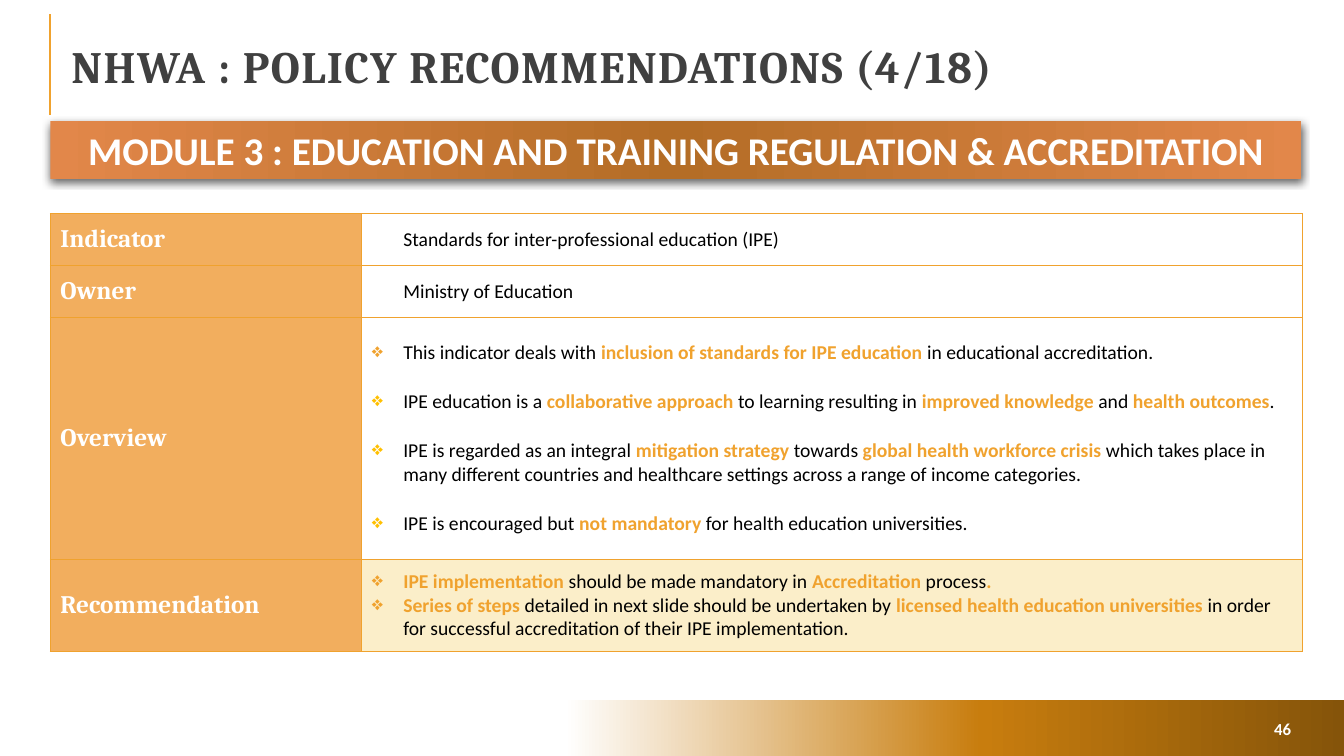
from lxml import etree
from pptx import Presentation
from pptx import util as u
from pptx.dml.color import RGBColor
from pptx.enum import shapes, text
from pptx.oxml import ns

BULLET = 0.79


def color(code):
    return RGBColor.from_string(code)


def node(parent, tag, **attrs):
    return etree.SubElement(parent, ns.qn("a:" + tag), attrs)


class Deck:
    """Holds the style and the current slide, and draws each kind of element."""

    accent, gold, dark = "F0A22E", "FFC000", "404040"
    label, pale, white, black = "F2AE5E", "FBEEC9", "FFFFFF", "000000"
    head, body = "Cambria", "Calibri"

    def __init__(self):
        self.prs = Presentation()
        self.prs.slide_width, self.prs.slide_height = u.Cm(33.87), u.Cm(19.05)
        self.slide = self.prs.slides.add_slide(self.prs.slide_layouts[6])

    def font(self, para, name, size, code, bold=True):
        font = para.font
        font.name, font.size, font.bold = name, u.Pt(size), bold
        font.color.rgb = color(code)

    def rule(self, x, top, end):
        line = self.slide.shapes.add_connector(
            shapes.MSO_CONNECTOR.STRAIGHT, u.Cm(x), u.Cm(end), u.Cm(x), u.Cm(top))
        line.line.color.rgb = color(self.accent)
        line.line.width = u.Pt(1.5)
        node(line._element.spPr, "effectLst")

    def bar(self, box, stops):
        shape = self.slide.shapes.add_shape(
            shapes.MSO_SHAPE.RECTANGLE, *map(u.Cm, box))
        shape.shadow.inherit = False
        shape.fill.gradient()
        shape.fill.gradient_angle = 0
        shape.line.fill.background()
        group = shape._element.spPr.find(".//" + ns.qn("a:gsLst"))
        group.clear()
        for place, code in stops:
            node(node(group, "gs", pos=str(place * 1000)), "srgbClr", val=code)
        return shape

    def banner(self, box, words, stops):
        shape = self.bar(box, stops)
        effect = shape._element.spPr.find(ns.qn("a:effectLst"))
        shade = node(effect, "outerShdw", blurRad=str(u.Pt(6)),
                     dist=str(u.Pt(2)), dir="5400000", rotWithShape="0")
        node(node(shade, "srgbClr", val=self.black), "alpha", val="60000")
        para = shape.text_frame.paragraphs[0]
        para.text = words
        para.alignment = text.PP_ALIGN.CENTER
        self.font(para, self.body, 28, self.white)

    def label_box(self, box, words, name, size, code):
        frame = self.slide.shapes.add_textbox(*map(u.Cm, box)).text_frame
        frame.word_wrap = True
        frame.vertical_anchor = text.MSO_ANCHOR.MIDDLE
        para = frame.paragraphs[0]
        para.text = words
        self.font(para, name, size, code)
        return para

    def title(self, box, words):
        para = self.label_box(box, words, self.head, 32, self.dark)
        para.line_spacing = 0.8
        para._p.pPr.find(ns.qn("a:defRPr")).set("spc", "100")

    def number(self, box, words):
        para = self.label_box(box, words, self.body, 12, self.white)
        para.alignment = text.PP_ALIGN.RIGHT

    def rich(self, para, words, mark, gap):
        props = para._p.get_or_add_pPr()
        props.set("marL", str(u.Cm(BULLET)))
        if mark:
            props.set("indent", str(-u.Cm(BULLET)))
            node(node(props, "buClr"), "srgbClr", val=mark)
            node(props, "buChar", char="❖")
        if gap:
            para.space_before = u.Pt(gap)
        self.font(para, self.body, 14, self.black, False)
        for turn, part in enumerate(words.split("*")):
            if part:
                run = para.add_run()
                run.text = part
                if turn % 2:
                    run.font.bold = True
                    run.font.color.rgb = color(self.accent)

    def cell(self, cell, code):
        cell.vertical_anchor = text.MSO_ANCHOR.MIDDLE
        props = cell._tc.get_or_add_tcPr()
        for side in ("lnL", "lnR", "lnT", "lnB"):
            edge = node(props, side, w=str(u.Pt(0.75)))
            node(node(edge, "solidFill"), "srgbClr", val=self.accent)
        cell.fill.solid()
        cell.fill.fore_color.rgb = color(code)

    def table(self, box, cols, rows):
        grid = self.slide.shapes.add_table(
            len(rows), len(cols), *map(u.Cm, box)).table
        for col, width in zip(grid.columns, cols):
            col.width = u.Cm(width)
        for i, (name, height, back, gap, lines) in enumerate(rows):
            grid.rows[i].height = u.Cm(height)
            left, right = grid.cell(i, 0), grid.cell(i, 1)
            self.cell(left, self.label)
            self.cell(right, back)
            para = left.text_frame.paragraphs[0]
            para.text = name
            self.font(para, self.head, 18, self.white)
            frame = right.text_frame
            for j, (mark, words) in enumerate(lines):
                para = frame.add_paragraph() if j else frame.paragraphs[0]
                self.rich(para, words, mark, gap)


def main():
    deck = Deck()
    deck.rule(1.27, 0.36, 2.9)
    deck.bar((0, 17.65, 33.87, 1.4),
             [(42, "FFFFFF"), (73, "C87D0E"), (100, "85540A")])
    deck.title((1.55, 0.71, 31.24, 2.13), "NHWA : POLICY RECOMMENDATIONS (4/18)")
    accent, gold = deck.accent, deck.gold
    deck.table((1.27, 5.38, 31.55, 11.03), (7.85, 23.7), [
        ("Indicator", 1.3, deck.white, 0,
         [(None, "Standards for inter-professional education (IPE)")]),
        ("Owner", 1.32, deck.white, 0, [(None, "Ministry of Education")]),
        ("Overview", 6.1, deck.white, 18, [
            (accent, "This indicator deals with *inclusion of standards for IPE "
                     "education *in educational accreditation."),
            (gold, "IPE education is a *collaborative approach *to learning "
                   "resulting in *improved knowledge *and *health outcomes*."),
            (gold, "IPE is regarded as an integral *mitigation strategy *towards "
                   "*global health workforce crisis *which takes place in many "
                   "different countries and healthcare settings across a range "
                   "of income categories."),
            (gold, "IPE is encouraged but *not mandatory *for health education "
                   "universities.")]),
        ("Recommendation", 2.31, deck.pale, 0, [
            (accent, "*IPE implementation *should be made mandatory in "
                     "*Accreditation *process*.*"),
            (accent, "*Series of steps *detailed in next slide should be "
                     "undertaken by *licensed health education universities *in "
                     "order for successful accreditation of their IPE "
                     "implementation.")]),
    ])
    deck.number((30.1, 17.98, 2.69, 0.76), "46")
    deck.banner((1.27, 3.05, 31.52, 1.45),
                "MODULE 3 : EDUCATION AND TRAINING REGULATION & ACCREDITATION",
                [(0, "E2874A"), (50, "B46D26"), (100, "E2874A")])
    deck.prs.save("out.pptx")


if __name__ == "__main__":
    main()
